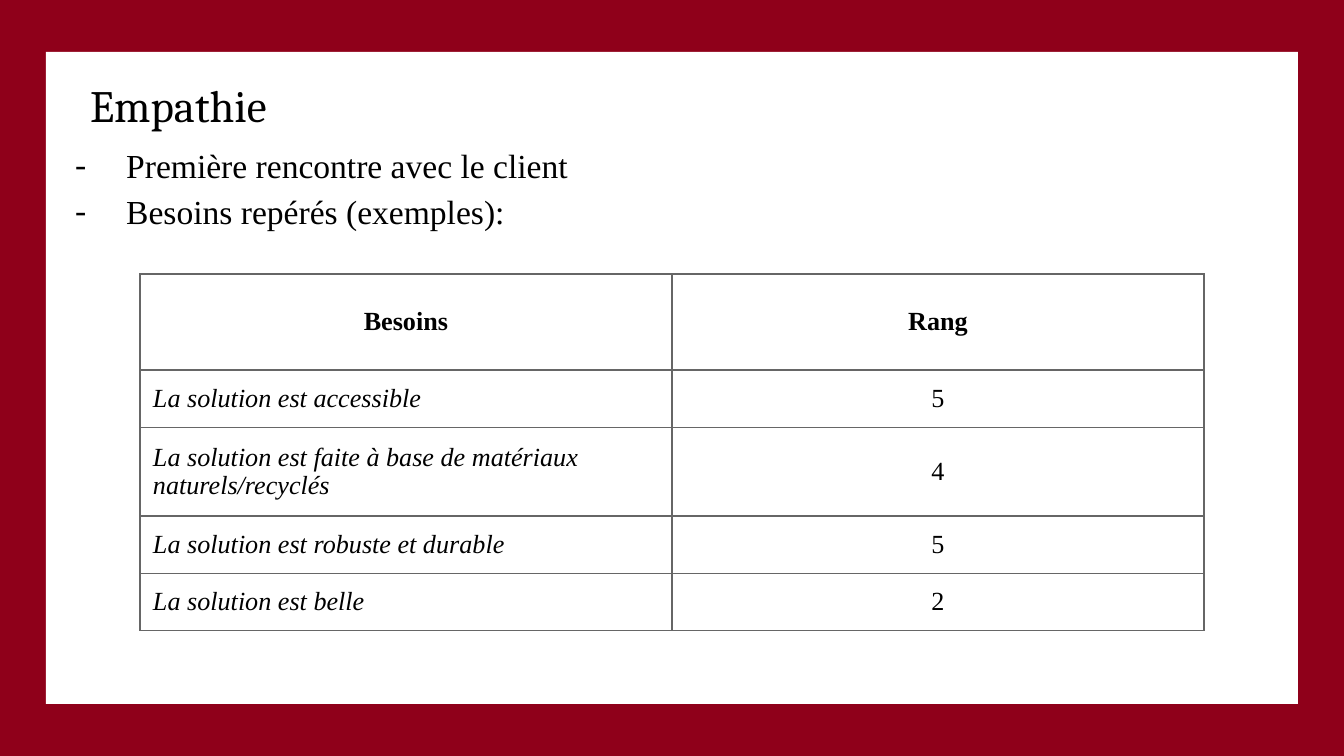
import pptx
import pptx.dml.color
import pptx.enum.shapes
import pptx.enum.text
import pptx.oxml
import pptx.oxml.ns
import pptx.util

RED = pptx.dml.color.RGBColor(0x8F, 0x00, 0x1A)
WHITE = pptx.dml.color.RGBColor(0xFF, 0xFF, 0xFF)
BLACK = pptx.dml.color.RGBColor(0x00, 0x00, 0x00)
GREY = pptx.dml.color.RGBColor(0x66, 0x66, 0x66)
SERIF = "Times New Roman"
TITLE_FONT = "Cambria"

TITLE = "Empathie"
POINTS = ["Première rencontre avec le client", "Besoins repérés (exemples):"]
NEEDS = [
    ("Besoins", "Rang"),
    ("La solution est accessible", "5"),
    ("La solution est faite à base de matériaux naturels/recyclés", "4"),
    ("La solution est robuste et durable", "5"),
    ("La solution est belle", "2"),
]

WIDTH, HEIGHT = 1344, 756
PANEL = (46, 52, 1252, 652)
TITLE_BOX = (77, 65, 1185, 82)
POINTS_BOX = (46, 126, 1252, 148)
TABLE_LEFT, TABLE_TOP, COLUMN = 140, 274, 532
HEADER_ROW, NEED_ROW = 96, 56
INSET = 13


def px(length):
    return pptx.util.Emu(round(length * 914400 / 134.4))


def place(box):
    return [px(length) for length in box]


def inset(target):
    """Give a text frame or a table cell the same margin on every side."""
    target.margin_left = target.margin_right = px(INSET)
    target.margin_top = target.margin_bottom = px(INSET)


def add_run(paragraph, text, size, font=SERIF, bold=False, italic=False):
    run = paragraph.add_run()
    run.text = text
    run.font.size = pptx.util.Pt(size)
    run.font.name = font
    run.font.bold = bold
    run.font.italic = italic
    run.font.color.rgb = BLACK


def add_text_box(slide, box):
    frame = slide.shapes.add_textbox(*place(box)).text_frame
    frame.word_wrap = True
    inset(frame)
    return frame


def add_dash(paragraph):
    properties = paragraph._p.get_or_add_pPr()
    properties.set("marL", str(pptx.util.Inches(0.5)))
    properties.set("indent", str(-pptx.util.Inches(0.38)))
    namespace = pptx.oxml.ns.nsdecls("a")
    for bullet in (
        f'<a:buClr {namespace}><a:srgbClr val="{BLACK}"/></a:buClr>',
        f'<a:buFont {namespace} typeface="{SERIF}"/>',
        f'<a:buChar {namespace} char="-"/>',
    ):
        properties.append(pptx.oxml.parse_xml(bullet))


def add_borders(cell):
    properties = cell._tc.get_or_add_tcPr()
    for position, side in enumerate(("lnL", "lnR", "lnT", "lnB")):
        properties.insert(position, pptx.oxml.parse_xml(
            f'<a:{side} {pptx.oxml.ns.nsdecls("a")} w="{pptx.util.Pt(0.75)}">'
            f'<a:solidFill><a:srgbClr val="{GREY}"/></a:solidFill></a:{side}>'))


def add_panel(slide):
    panel = slide.shapes.add_shape(
        pptx.enum.shapes.MSO_SHAPE.RECTANGLE, *place(PANEL))
    panel.shadow.inherit = False
    panel.fill.solid()
    panel.fill.fore_color.rgb = WHITE
    panel.line.fill.background()


def add_points(slide):
    frame = add_text_box(slide, POINTS_BOX)
    for index, point in enumerate(POINTS):
        paragraph = frame.add_paragraph() if index else frame.paragraphs[0]
        paragraph.line_spacing = 1.15
        add_dash(paragraph)
        add_run(paragraph, point, 18)


def add_needs(slide):
    heights = [HEADER_ROW] + [NEED_ROW] * (len(NEEDS) - 1)
    columns = len(NEEDS[0])
    table = slide.shapes.add_table(
        len(NEEDS), columns,
        *place((TABLE_LEFT, TABLE_TOP, columns * COLUMN, sum(heights)))).table
    table.first_row = table.horz_banding = False
    for row, (height, texts) in enumerate(zip(heights, NEEDS)):
        table.rows[row].height = px(height)
        for column, text in enumerate(texts):
            cell = table.cell(row, column)
            cell.fill.background()
            add_borders(cell)
            inset(cell)
            cell.vertical_anchor = pptx.enum.text.MSO_ANCHOR.MIDDLE
            is_header = row == 0
            is_need = not is_header and column == 0
            paragraph = cell.text_frame.paragraphs[0]
            if not is_need:
                paragraph.alignment = pptx.enum.text.PP_ALIGN.CENTER
            add_run(paragraph, text, 14, bold=is_header, italic=is_need)


def add_title(slide):
    frame = add_text_box(slide, TITLE_BOX)
    frame.auto_size = pptx.enum.text.MSO_AUTO_SIZE.SHAPE_TO_FIT_TEXT
    add_run(frame.paragraphs[0], TITLE, 24, TITLE_FONT)


def main():
    presentation = pptx.Presentation()
    presentation.slide_width, presentation.slide_height = place((WIDTH, HEIGHT))
    slide = presentation.slides.add_slide(presentation.slide_layouts[6])
    slide.background.fill.solid()
    slide.background.fill.fore_color.rgb = RED
    add_panel(slide)
    add_points(slide)
    add_needs(slide)
    add_title(slide)
    presentation.save("out.pptx")


if __name__ == "__main__":
    main()
